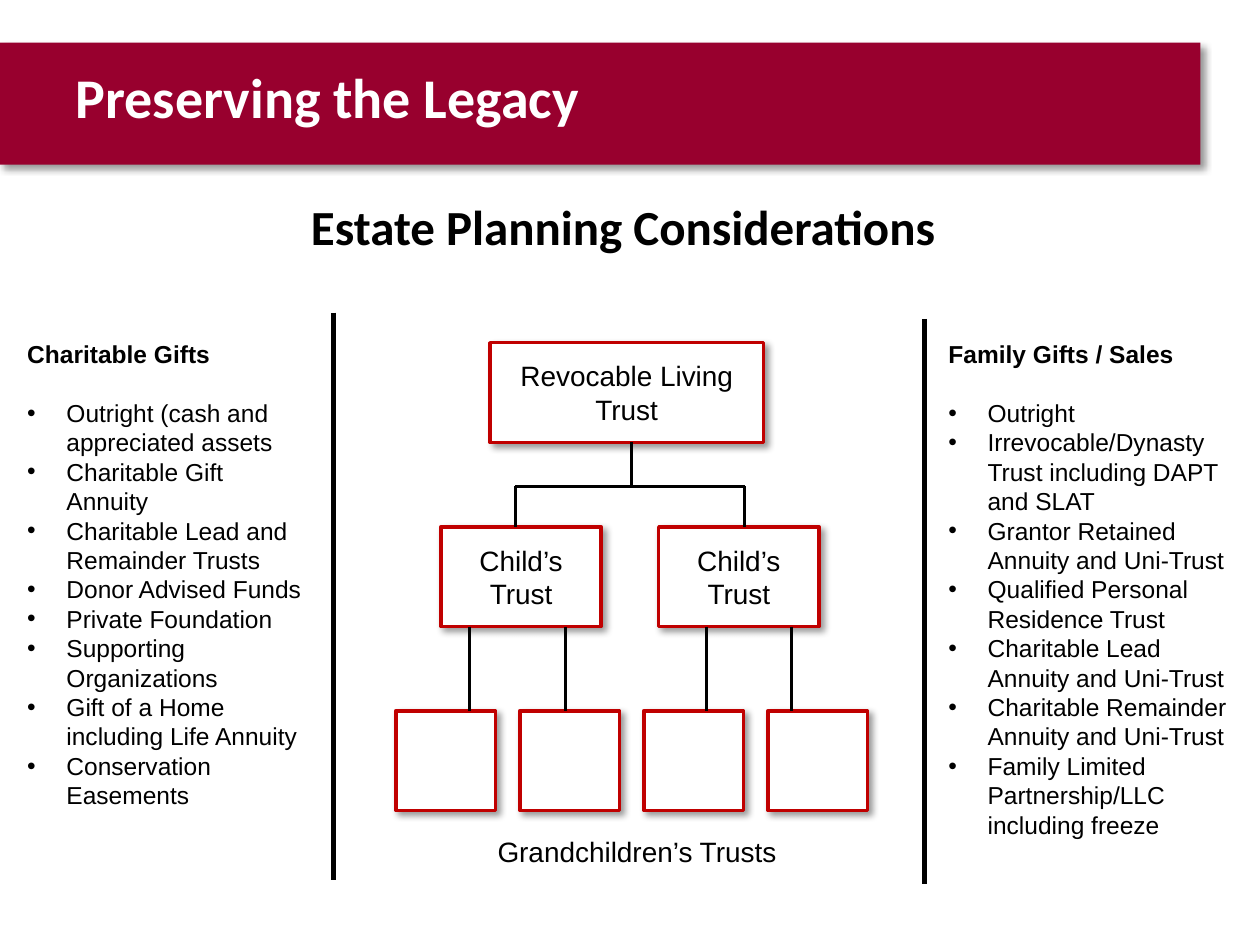
"""Build the estate planning slide with its trust tree and two gift lists."""
from lxml.etree import SubElement
from pptx import Presentation
from pptx.dml.color import RGBColor
from pptx.enum.shapes import MSO_CONNECTOR as CONN, MSO_SHAPE as SHAPE
from pptx.enum.text import MSO_ANCHOR as ANCHOR, MSO_AUTO_SIZE as AUTO, PP_ALIGN as ALIGN
from pptx.oxml.ns import qn
from pptx.util import Cm, Pt

COLORS = {"band": "98002E", "border": "C00000", "text": "000000", "white": "FFFFFF"}

TITLE = "Preserving the Legacy"
SUBTITLE = "Estate Planning Considerations"
GRANDCHILDREN = "Grandchildren’s Trusts"
LISTS = [
    ("Charitable Gifts", (0.3, 6.71, 6.05, 9.83), [
        "Outright (cash and appreciated assets",
        "Charitable Gift Annuity",
        "Charitable Lead and Remainder Trusts",
        "Donor Advised Funds",
        "Private Foundation",
        "Supporting Organizations",
        "Gift of a Home including Life Annuity",
        "Conservation Easements",
    ]),
    ("Family Gifts / Sales", (18.87, 6.71, 6.35, 10.44), [
        "Outright",
        "Irrevocable/Dynasty Trust including DAPT and SLAT",
        "Grantor Retained Annuity and Uni-Trust",
        "Qualified Personal Residence Trust",
        "Charitable Lead Annuity and Uni-Trust",
        "Charitable Remainder Annuity and Uni-Trust",
        "Family Limited Partnership/LLC including freeze",
    ]),
]

BOX = 2.01
ROOT_TOP, CHILD_TOP, GRAND_TOP = 6.91, 10.62, 14.33
CHILD_X = (8.89, 13.28)
GRAND_LEFT, GRAND_STEP, GRAND_COUNT = 7.98, 2.5, 4
BAR_Y, TRUNK_X, DROP_X = 9.8, 12.73, (10.39, 15.01)
LEG_X = (9.47, 11.4, 14.25, 15.95)
DIVIDERS = [(6.73, 6.3, 17.73), (18.64, 6.43, 17.83)]


def rgb(name):
    return RGBColor.from_string(COLORS[name])


def cms(values):
    return [Cm(v) for v in values]


def add_run(p, text, size, font="Arial", color="text", bold=False):
    r = p.add_run()
    r.text = text
    r.font.size, r.font.name, r.font.bold = Pt(size), font, bold
    r.font.color.rgb = rgb(color)


def add_text(s, at, wrap=True):
    tf = s.shapes.add_textbox(*cms(at)).text_frame
    tf.word_wrap = wrap
    tf.auto_size = AUTO.SHAPE_TO_FIT_TEXT
    return tf


def add_box(s, at, fill="white", border="border", lines=()):
    sp = s.shapes.add_shape(SHAPE.RECTANGLE, *cms(at))
    sp.fill.solid()
    sp.fill.fore_color.rgb = rgb(fill)
    if border:
        sp.line.color.rgb = rgb(border)
        sp.line.width = Pt(2)
    else:
        sp.line.fill.background()
    sp.shadow.inherit = False
    effects = sp.element.spPr.find(qn("a:effectLst"))
    shadow = SubElement(effects, qn("a:outerShdw"), blurRad=str(Pt(4)), dist=str(Pt(3)),
                        dir="2700000", algn="tl", rotWithShape="0")
    color = SubElement(shadow, qn("a:srgbClr"), val=COLORS["text"])
    SubElement(color, qn("a:alpha"), val="40000")
    tf = sp.text_frame
    tf.vertical_anchor = ANCHOR.MIDDLE
    p = tf.paragraphs[0]
    p.alignment = ALIGN.CENTER
    for i, text in enumerate(lines):
        if i:
            p.add_line_break()
        add_run(p, text, 16)
    return sp


def add_line(s, ends, width=1.75):
    line = s.shapes.add_connector(CONN.STRAIGHT, *cms(ends))
    line.line.color.rgb = rgb("text")
    line.line.width = Pt(width)
    SubElement(line.element.spPr, qn("a:effectLst"))


def add_list(s, heading, at, items):
    tf = add_text(s, at)
    p = tf.paragraphs[0]
    p.space_after = Pt(16.8)
    add_run(p, heading, 14, bold=True)
    for item in items:
        p = tf.add_paragraph()
        pPr = p._p.get_or_add_pPr()
        pPr.set("marL", str(Cm(0.79)))
        pPr.set("indent", str(-Cm(0.79)))
        SubElement(pPr, qn("a:buFont"), typeface="Arial")
        SubElement(pPr, qn("a:buChar"), char="•")
        add_run(p, item, 14)


def add_header(s):
    title = s.shapes.title
    title.left, title.top, title.width, title.height = cms((1.27, 0.91, 22.86, 2.06))
    title.text_frame.vertical_anchor = ANCHOR.MIDDLE
    p = title.text_frame.paragraphs[0]
    p.alignment = ALIGN.LEFT
    add_run(p, TITLE, 32, "Calibri", "white", True)
    band = add_box(s, (0, 0.86, 24.2, 2.46), "band", None)
    title.element.addprevious(band.element)
    tf = add_text(s, (6.02, 3.84, 13.23, 1.45), wrap=False)
    add_run(tf.paragraphs[0], SUBTITLE, 28, "Calibri", bold=True)


def add_tree(s):
    add_box(s, (9.88, ROOT_TOP, 5.51, BOX), lines=["Revocable Living Trust"])
    for x in CHILD_X:
        add_box(s, (x, CHILD_TOP, 3.23, BOX), lines=["Child’s", "Trust"])
    for i in range(GRAND_COUNT):
        add_box(s, (GRAND_LEFT + i * GRAND_STEP, GRAND_TOP, BOX, BOX))
    tf = add_text(s, (9.78, 16.69, 6.99, 0.94))
    add_run(tf.paragraphs[0], GRANDCHILDREN, 16)

    add_line(s, (DROP_X[0], BAR_Y, DROP_X[1], BAR_Y))
    add_line(s, (TRUNK_X, ROOT_TOP + BOX, TRUNK_X, BAR_Y))
    for x in DROP_X:
        add_line(s, (x, BAR_Y, x, CHILD_TOP))
    for x in LEG_X:
        add_line(s, (x, CHILD_TOP + BOX, x, GRAND_TOP))


def main():
    prs = Presentation()
    prs.slide_width, prs.slide_height = Cm(25.4), Cm(19.05)
    s = prs.slides.add_slide(prs.slide_layouts[5])
    add_header(s)
    add_tree(s)
    for x, top, bottom in DIVIDERS:
        add_line(s, (x, top, x, bottom), 3)
    for heading, at, items in LISTS:
        add_list(s, heading, at, items)
    prs.save("out.pptx")


if __name__ == "__main__":
    main()
